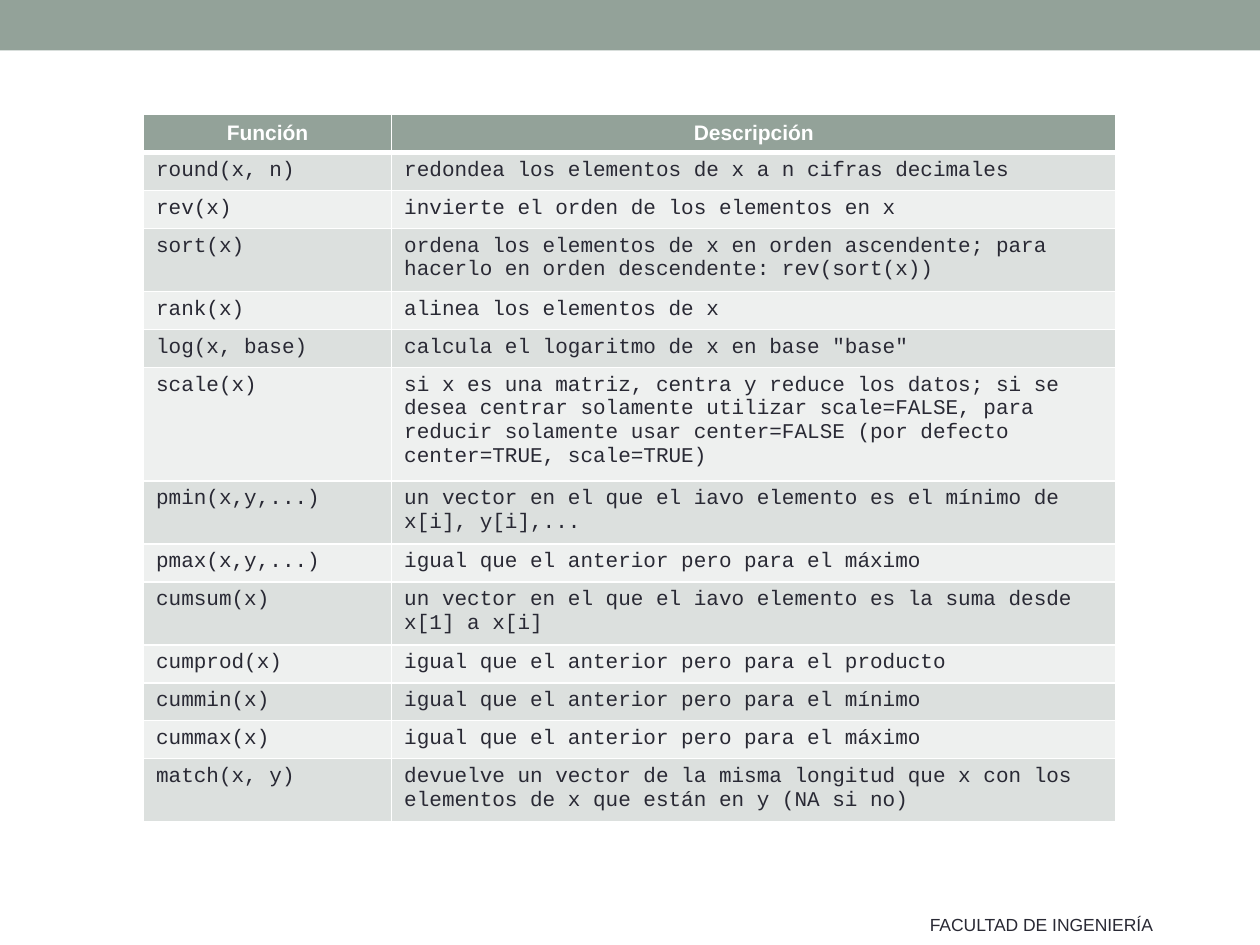
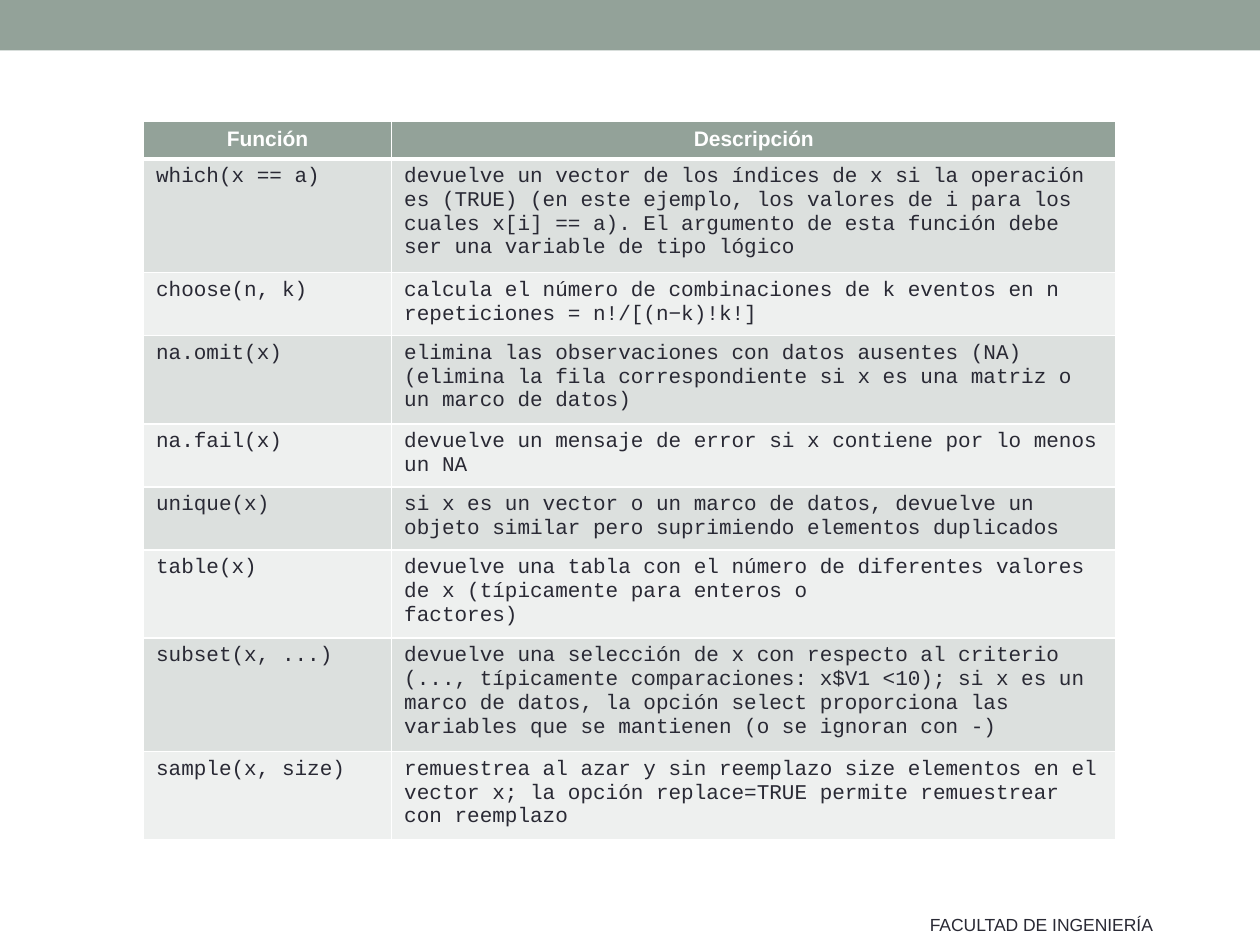
"""Two slides of R function reference tables with a shared band and footer."""
from lxml import etree
from pptx import Presentation
from pptx.dml.color import RGBColor
from pptx.enum.shapes import MSO_SHAPE
from pptx.enum.text import MSO_AUTO_SIZE, PP_ALIGN
from pptx.oxml.ns import qn
from pptx.util import Pt

SAGE = RGBColor(0x93, 0xA2, 0x99)
ROW_DARK = RGBColor(0xDC, 0xE0, 0xDE)
ROW_LIGHT = RGBColor(0xEE, 0xF0, 0xEF)
INK = RGBColor(0x29, 0x29, 0x34)
WHITE = RGBColor(0xFF, 0xFF, 0xFF)

SANS, MONO = "Arial", "Courier New"
SLIDE_W, SLIDE_H = 720, 540
TABLE_LEFT = 82
COLUMN_WIDTHS = (141.8, 414)
HEADER_H, LINE_H, ROW_PADDING = 21, 14.3, 7.4
HEADINGS = ("Función", "Descripción")

VECTOR_FUNCTIONS = [
    ("round(x, n)", "redondea los elementos de x a n cifras decimales", 1),
    ("rev(x)", "invierte el orden de los elementos en x", 1),
    ("sort(x)", "ordena los elementos de x en orden ascendente; para "
     "hacerlo en orden descendente: rev(sort(x))", 2),
    ("rank(x)", "alinea los elementos de x", 1),
    ("log(x, base)", 'calcula el logaritmo de x en base "base"', 1),
    ("scale(x)", "si x es una matriz, centra y reduce los datos; si se "
     "desea centrar solamente utilizar scale=FALSE, para reducir solamente "
     "usar center=FALSE (por defecto center=TRUE, scale=TRUE)", 4),
    ("pmin(x,y,...)", "un vector en el que el iavo elemento es el mínimo de "
     "x[i], y[i],...", 2),
    ("pmax(x,y,...)", "igual que el anterior pero para el máximo", 1),
    ("cumsum(x)", "un vector en el que el iavo elemento es la suma desde "
     "x[1] a x[i]", 2),
    ("cumprod(x)", "igual que el anterior pero para el producto", 1),
    ("cummin(x)", "igual que el anterior pero para el mínimo", 1),
    ("cummax(x)", "igual que el anterior pero para el máximo", 1),
    ("match(x, y)", "devuelve un vector de la misma longitud que x con los "
     "elementos de x que están en y (NA si no)", 2),
]

DATA_FUNCTIONS = [
    ("which(x == a)", "devuelve un vector de los índices de x si la operación "
     "es (TRUE) (en este ejemplo, los valores de i para los cuales "
     "x[i] == a). El argumento de esta función debe ser una variable de tipo "
     "lógico", 4),
    ("choose(n, k)", "calcula el número de combinaciones de k eventos en n "
     "repeticiones = n!/[(n−k)!k!]", 2),
    ("na.omit(x)", "elimina las observaciones con datos ausentes (NA) "
     "(elimina la fila correspondiente si x es una matriz o un marco de "
     "datos)", 3),
    ("na.fail(x)", "devuelve un mensaje de error si x contiene por lo menos "
     "un NA", 2),
    ("unique(x)", "si x es un vector o un marco de datos, devuelve un objeto "
     "similar pero suprimiendo elementos duplicados", 2),
    ("table(x)", "devuelve una tabla con el número de diferentes valores de x "
     "(típicamente para enteros o\nfactores)", 3),
    ("subset(x, ...)", "devuelve una selección de x con respecto al criterio "
     "(..., típicamente comparaciones: x$V1 <10); si x es un marco de datos, "
     "la opción select proporciona las variables que se mantienen (o se "
     "ignoran con -)", 4),
    ("sample(x, size)", "remuestrea al azar y sin reemplazo size elementos en "
     "el vector x; la opción replace=TRUE permite remuestrear con "
     "reemplazo", 3),
]


def format_text(tf, font, size, color, bold=False, align=PP_ALIGN.LEFT):
    for p in tf.paragraphs:
        p.alignment = align
        for r in p.runs:
            r.font.name, r.font.size, r.font.bold = font, Pt(size), bold
            r.font.color.rgb = color


def add_band(s):
    sp = s.shapes.add_shape(MSO_SHAPE.RECTANGLE, 0, 0, Pt(SLIDE_W), Pt(28.8))
    sp.shadow.inherit = False
    sp.fill.solid()
    sp.fill.fore_color.rgb = SAGE
    sp.line.fill.background()


def add_footer(s):
    sp = s.shapes.add_textbox(Pt(524.2), Pt(519), Pt(145.4), Pt(19.4))
    tf = sp.text_frame
    tf.word_wrap = False
    tf.auto_size = MSO_AUTO_SIZE.SHAPE_TO_FIT_TEXT
    tf.text = "FACULTAD DE INGENIERÍA"
    format_text(tf, SANS, 10, INK)


def set_borders(cell, top=1, bottom=1):
    tc_pr = cell._tc.get_or_add_tcPr()
    for side, width in (("L", 1), ("R", 1), ("T", top), ("B", bottom)):
        ln = etree.SubElement(tc_pr, qn(f"a:ln{side}"), w=str(Pt(width)))
        fill = etree.SubElement(ln, qn("a:solidFill"))
        etree.SubElement(fill, qn("a:srgbClr"), val=str(WHITE))


def fill_cell(cell, text, color):
    cell.text = text
    cell.fill.solid()
    cell.fill.fore_color.rgb = color


def add_function_table(s, top, functions):
    heights = [HEADER_H] + [ROW_PADDING + LINE_H * n for _, _, n in functions]
    frame = s.shapes.add_table(len(heights), len(HEADINGS), Pt(TABLE_LEFT),
                               Pt(top), Pt(sum(COLUMN_WIDTHS)),
                               Pt(sum(heights)))
    table = frame.table
    for column, width in zip(table.columns, COLUMN_WIDTHS):
        column.width = Pt(width)
    for row, height in zip(table.rows, heights):
        row.height = Pt(height)
    for cell, heading in zip(table.rows[0].cells, HEADINGS):
        set_borders(cell, bottom=3)
        fill_cell(cell, heading, SAGE)
        format_text(cell.text_frame, SANS, 12, WHITE, True, PP_ALIGN.CENTER)
    for i, (name, description, _) in enumerate(functions, 1):
        for cell, text in zip(table.rows[i].cells, (name, description)):
            set_borders(cell, top=3 if i == 1 else 1)
            fill_cell(cell, text, ROW_DARK if i % 2 else ROW_LIGHT)
            format_text(cell.text_frame, MONO, 12, INK)


def main():
    prs = Presentation()
    prs.slide_width, prs.slide_height = Pt(SLIDE_W), Pt(SLIDE_H)
    for top, functions in ((65.5, VECTOR_FUNCTIONS), (69.3, DATA_FUNCTIONS)):
        s = prs.slides.add_slide(prs.slide_layouts[6])
        add_band(s)
        add_footer(s)
        add_function_table(s, top, functions)
    prs.save("out.pptx")


if __name__ == "__main__":
    main()
